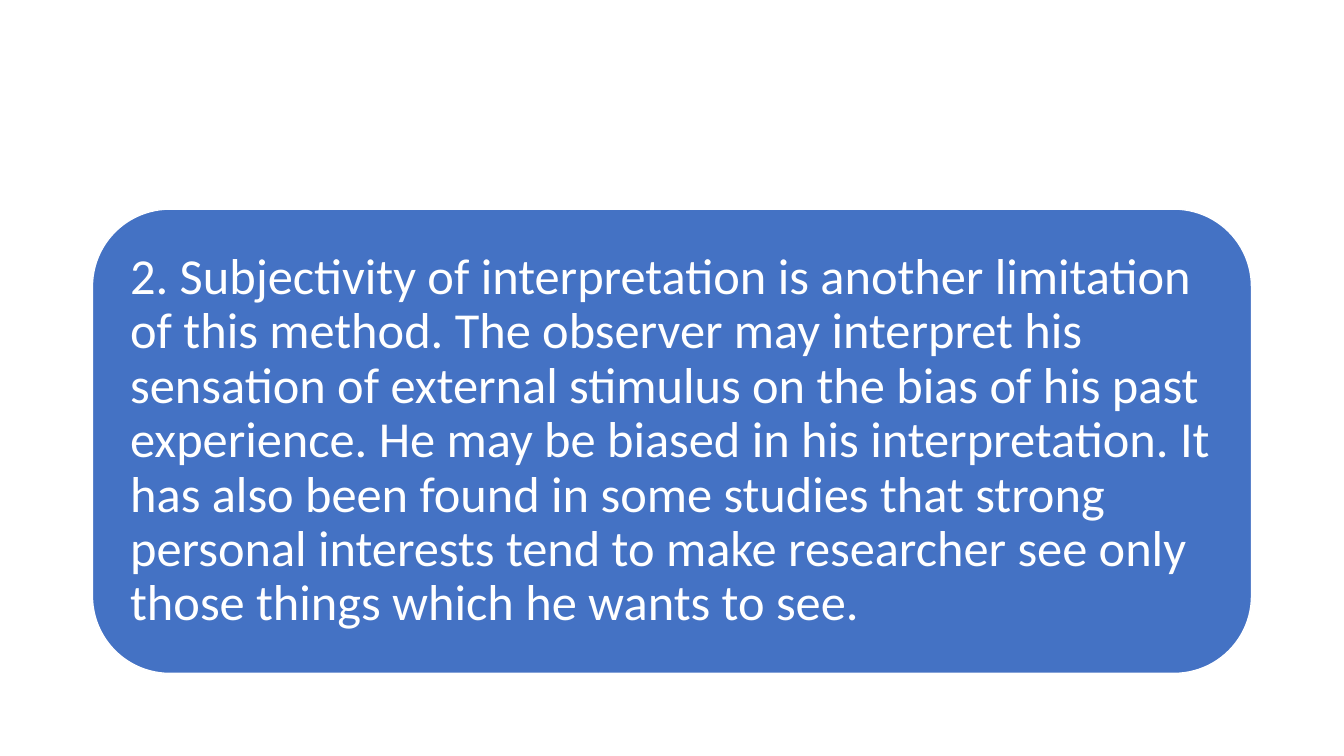
import pptx
import pptx.dml.color
import pptx.enum.shapes
import pptx.enum.text
import pptx.util

Cm = pptx.util.Cm
Pt = pptx.util.Pt
BLUE = pptx.dml.color.RGBColor(0x44, 0x72, 0xC4)
WHITE = pptx.dml.color.RGBColor(0xFF, 0xFF, 0xFF)

LIMITATION = (
    "2. Subjectivity of interpretation is another limitation of this method. "
    "The observer may interpret his sensation of external stimulus on the bias "
    "of his past experience. He may be biased in his interpretation. It has also "
    "been found in some studies that strong personal interests tend to make "
    "researcher see only those things which he wants to see."
)


def add_panel(slide, left, top, width, height):
    panel = slide.shapes.add_shape(
        pptx.enum.shapes.MSO_SHAPE.ROUNDED_RECTANGLE, left, top, width, height
    )
    panel.shadow.inherit = False
    panel.fill.solid()
    panel.fill.fore_color.rgb = BLUE
    panel.line.color.rgb = WHITE
    panel.line.width = Pt(1)
    return panel


def write_statement(panel, statement):
    frame = panel.text_frame
    frame.word_wrap = True
    frame.vertical_anchor = pptx.enum.text.MSO_ANCHOR.MIDDLE
    frame.margin_left = frame.margin_right = Cm(0.38)
    frame.margin_top = frame.margin_bottom = Cm(0.38)
    paragraph = frame.paragraphs[0]
    paragraph.text = statement
    paragraph.alignment = pptx.enum.text.PP_ALIGN.LEFT
    paragraph.line_spacing = 0.9
    paragraph.font.name = "Calibri"
    paragraph.font.size = Pt(36)
    paragraph.font.color.rgb = WHITE


def main():
    presentation = pptx.Presentation()
    presentation.slide_width = Cm(33.87)
    presentation.slide_height = Cm(19.05)
    slide = presentation.slides.add_slide(presentation.slide_layouts[6])
    limitation_panel = add_panel(slide, Cm(2.33), Cm(5.27), Cm(29.21), Cm(11.7))
    write_statement(limitation_panel, LIMITATION)
    presentation.save("out.pptx")


if __name__ == "__main__":
    main()
